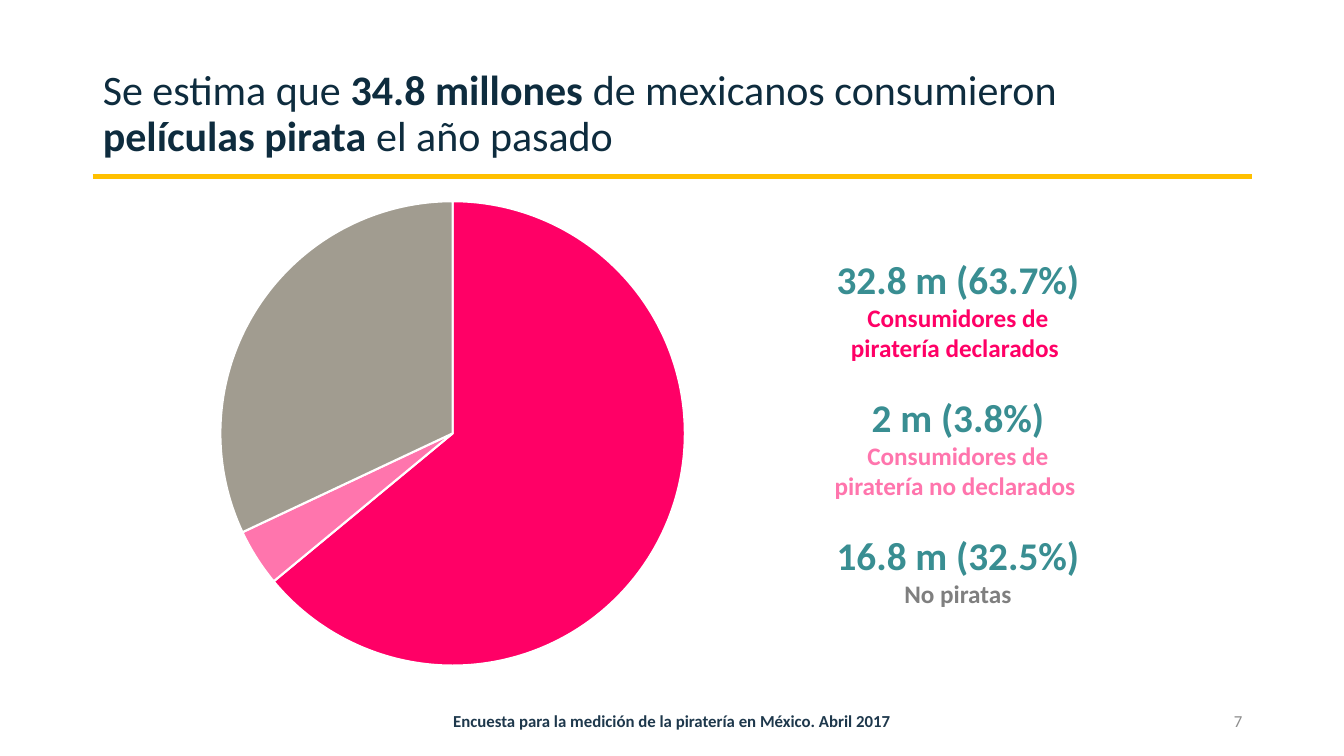
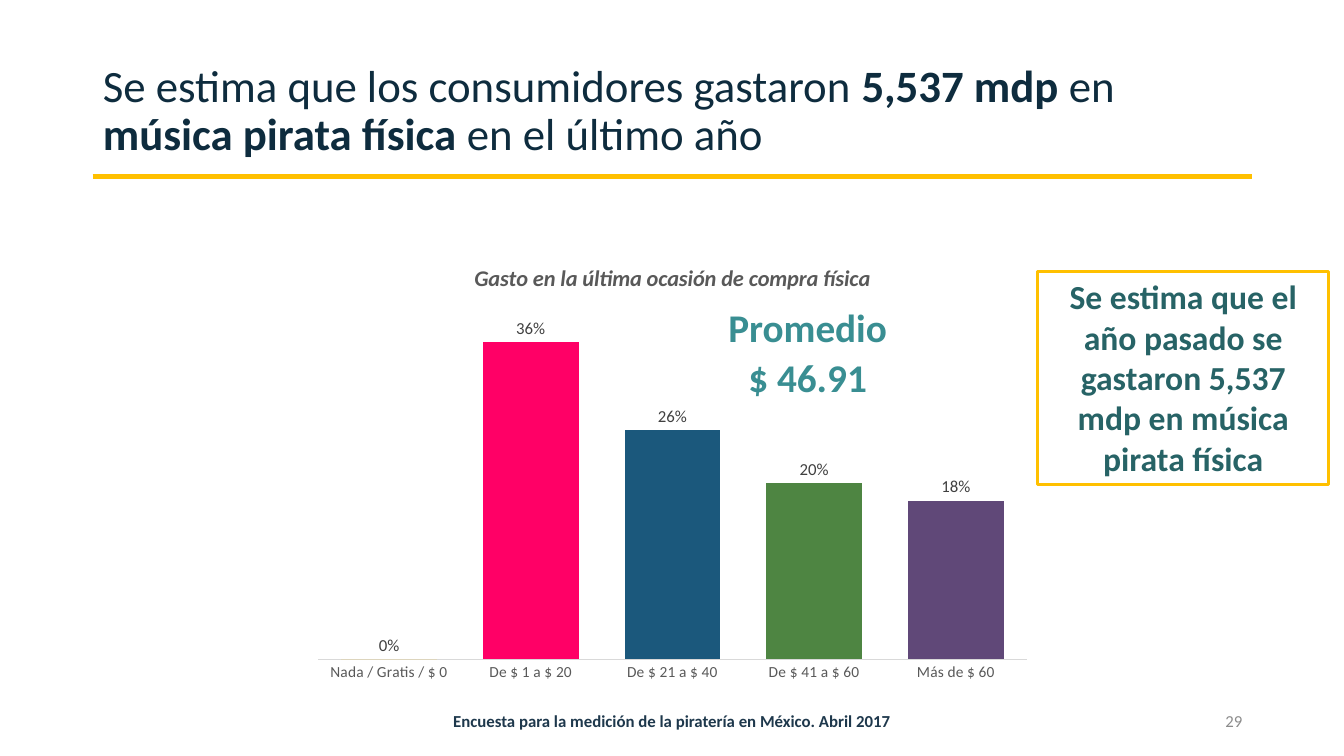
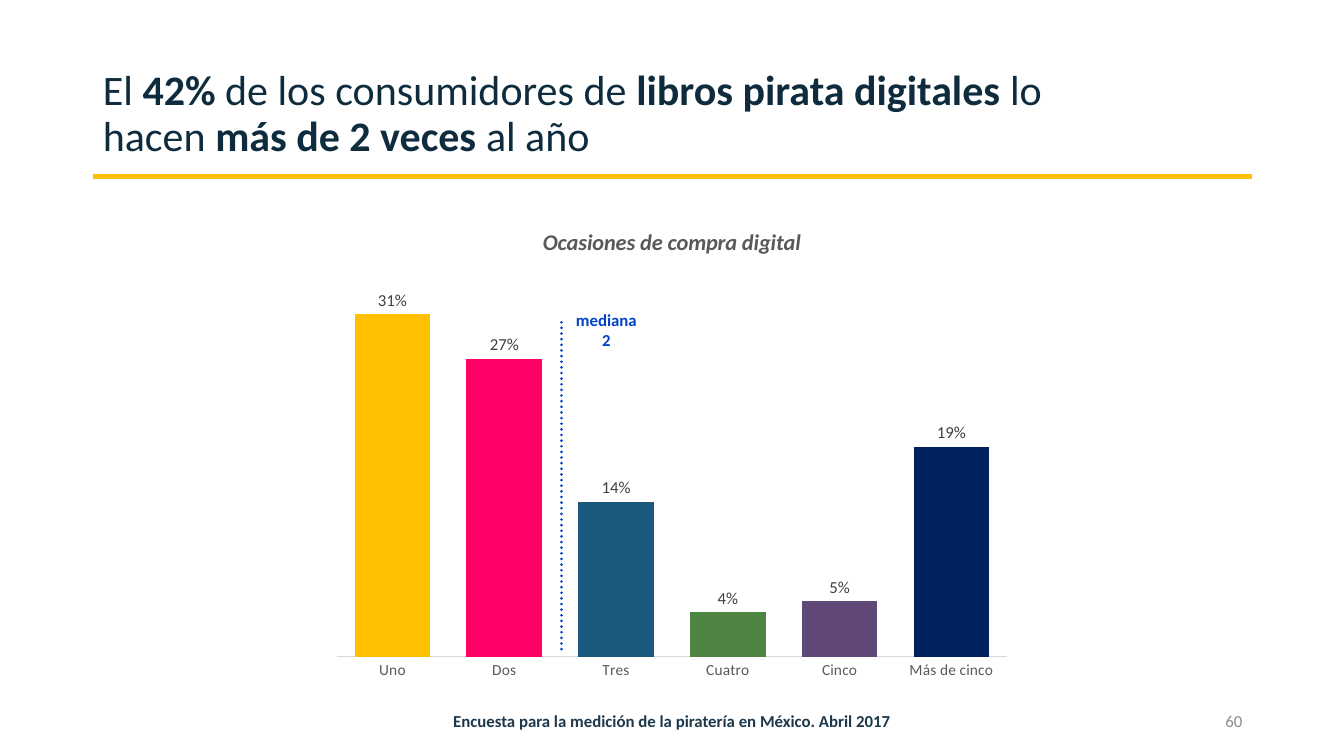
from lxml.etree import SubElement
from pptx import Presentation
from pptx.chart.data import CategoryChartData
from pptx.dml.color import RGBColor
from pptx.enum.chart import XL_CHART_TYPE, XL_LABEL_POSITION, XL_TICK_MARK
from pptx.enum.dml import MSO_LINE
from pptx.enum.shapes import MSO_CONNECTOR, MSO_SHAPE
from pptx.enum.text import MSO_ANCHOR, MSO_AUTO_SIZE, PP_ALIGN
from pptx.oxml.ns import qn
from pptx.util import Inches, Pt

FONT = "Calibri"
COLORS = {
    "title": "0E2C3E", "footer": "1E384C", "number": "8C8C8C",
    "gold": "FFC000", "pink": "FF0066", "light_pink": "FF75AD",
    "taupe": "A19C90", "gray": "7F7F7F", "blue": "1B587C",
    "green": "4E8542", "purple": "604878", "navy": "002060",
    "teal": "398E92", "dark_teal": "276366", "median": "0042C8",
    "axis_text": "595959", "axis_line": "D9D9D9", "label": "404040",
    "black": "000000", "white": "FFFFFF",
}
FOOTER = "Encuesta para la medición de la piratería en México. Abril 2017"

MOVIES = {
    "title": [("Se estima que ", False), ("34.8 millones ", True),
              ("de mexicanos consumieron ", False), ("películas pirata ", True),
              ("el año pasado", False)],
    "title_size": 30, "title_width": 10.18, "number": "7",
    "box": (1.61, 1.84, 5.76, 4.92), "plot": (0.1, 0.03, 0.8, 0.94),
    "values": [("1", 64, "pink"), ("2", 4, "light_pink"), ("3", 32, "taupe")],
}
MOVIE_GROUPS = [
    ("32.8 m (63.7%)", "Consumidores de piratería declarados ", "pink"),
    ("2 m (3.8%)", "Consumidores de piratería no declarados ", "light_pink"),
    ("16.8 m (32.5%)", "No piratas", "gray"),
]
MUSIC = {
    "title": [("Se estima que los consumidores gastaron ", False), ("5,537 mdp", True),
              (" en ", False), ("música pirata física ", True),
              ("en el último año", False)],
    "title_size": 32, "title_width": 10.34, "number": "29",
    "chart_title": "Gasto en la última ocasión de compra física",
    "box": (3.01, 2.43, 7.32, 4.42), "plot": (0.02, 0.14, 0.96, 0.79), "maximum": 0.4,
    "values": [("Nada / Gratis / $ 0", 0, "gold"), ("De $ 1 a $ 20", 0.36, "pink"),
               ("De $ 21 a $ 40", 0.26, "blue"), ("De $ 41 a $ 60", 0.2, "green"),
               ("Más de $ 60", 0.18, "purple")],
}
MUSIC_AVERAGE = ["Promedio", "$ 46.91"]
MUSIC_CALLOUT = "Se estima que el año pasado se gastaron 5,537 mdp en música pirata física"
BOOKS = {
    "title": [("El ", False), ("42%", True), (" de los consumidores de ", False),
              ("libros pirata digitales ", True), ("lo hacen ", False),
              ("más de 2 veces ", True), ("al año", False)],
    "title_size": 30, "title_width": 10.25, "number": "60",
    "chart_title": "Ocasiones de compra digital",
    "box": (3.2, 2.06, 6.93, 4.79), "plot": (0.02, 0.13, 0.96, 0.8), "maximum": 0.35,
    "values": [("Uno", 0.31, "gold"), ("Dos", 0.27, "pink"), ("Tres", 0.14, "blue"),
               ("Cuatro", 0.04, "green"), ("Cinco", 0.05, "purple"),
               ("Más de cinco", 0.19, "navy")],
}
BOOKS_MEDIAN = ["mediana", "2"]


def color(name):
    return RGBColor.from_string(COLORS[name])


def inches(values):
    return [Inches(value) for value in values]


def style_font(font, size, color_name, bold=False, italic=False):
    font.name, font.size, font.bold, font.italic = FONT, Pt(size), bold, italic
    font.color.rgb = color(color_name)


def add_run(paragraph, text, size, color_name, bold=False):
    run = paragraph.add_run()
    run.text = text
    style_font(run.font, size, color_name, bold)


def write_lines(frame, lines, align=PP_ALIGN.CENTER):
    for index, (text, size, color_name, bold, space) in enumerate(lines):
        paragraph = frame.add_paragraph() if index else frame.paragraphs[0]
        paragraph.alignment = align
        if index and space:
            paragraph.space_before = Pt(space)
        add_run(paragraph, text, size, color_name, bold)


def add_text(slide, box, lines, align=PP_ALIGN.CENTER, anchor=MSO_ANCHOR.TOP, wrap=True):
    frame = slide.shapes.add_textbox(*inches(box)).text_frame
    frame.word_wrap = wrap
    frame.vertical_anchor = anchor
    write_lines(frame, lines, align)


def add_line(slide, ends, color_name, width, dash=None):
    connector = slide.shapes.add_connector(MSO_CONNECTOR.STRAIGHT, *inches(ends))
    connector.line.color.rgb = color(color_name)
    connector.line.width = Pt(width)
    properties = connector._element.spPr
    if dash:
        connector.line.dash_style = dash
        properties.find(qn("a:ln")).set("cap", "rnd")
    SubElement(properties, qn("a:effectLst"))


def add_base_slide(presentation, content):
    slide = presentation.slides.add_slide(presentation.slide_layouts[5])
    title = slide.shapes.title
    title.left, title.top, title.width, title.height = inches(
        (0.92, 0.4, content["title_width"], 1.24))
    frame = title.text_frame
    frame.word_wrap = True
    frame.auto_size = MSO_AUTO_SIZE.NONE
    frame.vertical_anchor = MSO_ANCHOR.BOTTOM
    paragraph = frame.paragraphs[0]
    paragraph.alignment = PP_ALIGN.LEFT
    paragraph.line_spacing = 0.9
    for text, bold in content["title"]:
        add_run(paragraph, text, content["title_size"], "title", bold)
    add_line(slide, (0.92, 1.75, 12.42, 1.75), "gold", 3)
    add_text(slide, (9.42, 6.95, 3, 0.4), [(content["number"], 12, "number", False, 0)],
             PP_ALIGN.RIGHT, MSO_ANCHOR.MIDDLE)
    add_text(slide, (3.99, 6.95, 5.35, 0.4), [(FOOTER, 12, "footer", True, 0)],
             anchor=MSO_ANCHOR.MIDDLE)
    return slide


def set_plot_layout(chart, plot_box):
    plot_area = chart._chartSpace.chart.plotArea
    for layout in plot_area.findall(qn("c:layout")):
        plot_area.remove(layout)
    layout = SubElement(plot_area, qn("c:layout"))
    plot_area.insert(0, layout)
    manual = SubElement(layout, qn("c:manualLayout"))
    settings = [("layoutTarget", "inner"), ("xMode", "edge"), ("yMode", "edge")]
    settings += zip("xywh", plot_box)
    for tag, value in settings:
        SubElement(manual, qn(f"c:{tag}")).set("val", str(value))


def add_filled_chart(slide, content, chart_type):
    data = CategoryChartData()
    data.categories = [category for category, _, _ in content["values"]]
    data.add_series("Series 1", [value for _, value, _ in content["values"]])
    chart = slide.shapes.add_chart(chart_type, *inches(content["box"]), data).chart
    chart.has_legend = False
    chart.has_title = False
    style_font(chart.font, 10, "black")
    set_plot_layout(chart, content["plot"])
    series = chart.plots[0].series[0]
    for index, (_, _, color_name) in enumerate(content["values"]):
        fill = series.points[index].format.fill
        fill.solid()
        fill.fore_color.rgb = color(color_name)
    return chart


def add_pie(slide, content):
    chart = add_filled_chart(slide, content, XL_CHART_TYPE.PIE)
    chart.plots[0].vary_by_categories = True
    for index in range(len(content["values"])):
        line = chart.plots[0].series[0].points[index].format.line
        line.color.rgb = color("white")
        line.width = Pt(1.5)


def add_columns(slide, content):
    chart = add_filled_chart(slide, content, XL_CHART_TYPE.COLUMN_CLUSTERED)
    chart.has_title = True
    paragraph = chart.chart_title.text_frame.paragraphs[0]
    run = paragraph.add_run()
    run.text = content["chart_title"]
    style_font(run.font, 16, "axis_text", True, True)
    plot = chart.plots[0]
    plot.vary_by_categories = False
    plot.gap_width, plot.overlap = 48, -27
    plot.has_data_labels = True
    labels = plot.data_labels
    labels.show_value = True
    labels.position = XL_LABEL_POSITION.OUTSIDE_END
    labels.number_format, labels.number_format_is_linked = "0%", False
    style_font(labels.font, 12, "label")
    value_axis, category_axis = chart.value_axis, chart.category_axis
    value_axis.minimum_scale, value_axis.maximum_scale = 0, content["maximum"]
    value_axis.has_major_gridlines = False
    value_axis.visible = False
    category_axis.major_tick_mark = XL_TICK_MARK.NONE
    category_axis.format.line.color.rgb = color("axis_line")
    category_axis.format.line.width = Pt(0.75)
    style_font(category_axis.tick_labels.font, 11, "axis_text")


def build_movies(presentation):
    slide = add_base_slide(presentation, MOVIES)
    add_pie(slide, MOVIES)
    lines = []
    for figure, group, color_name in MOVIE_GROUPS:
        lines += [(figure, 28, "teal", True, 21.8), (group, 18, color_name, True, 0)]
    add_text(slide, (8.09, 2.48, 2.82, 3.64), lines)


def build_music(presentation):
    slide = add_base_slide(presentation, MUSIC)
    add_columns(slide, MUSIC)
    for index, text in enumerate(MUSIC_AVERAGE):
        add_text(slide, (6.84, 2.96 + 0.5 * index, 2.34, 0.57),
                 [(text, 28, "teal", True, 0)])
    callout = slide.shapes.add_shape(MSO_SHAPE.RECTANGLE, *inches((10.29, 2.69, 2.89, 2.12)))
    callout.shadow.inherit = False
    callout.fill.background()
    callout.line.color.rgb = color("gold")
    callout.line.width = Pt(2)
    callout.text_frame.word_wrap = True
    callout.text_frame.vertical_anchor = MSO_ANCHOR.TOP
    write_lines(callout.text_frame, [(MUSIC_CALLOUT, 24, "dark_teal", True, 0)])


def build_books(presentation):
    slide = add_base_slide(presentation, BOOKS)
    add_columns(slide, BOOKS)
    add_line(slide, (5.57, 6.44, 5.57, 3.18), "median", 2, MSO_LINE.ROUND_DOT)
    add_text(slide, (5.6, 3.02, 0.83, 0.5),
             [(text, 12, "median", True, 0) for text in BOOKS_MEDIAN], wrap=False)


def main():
    presentation = Presentation()
    presentation.slide_width, presentation.slide_height = inches((13.33, 7.5))
    build_movies(presentation)
    build_music(presentation)
    build_books(presentation)
    presentation.save("out.pptx")


if __name__ == "__main__":
    main()
